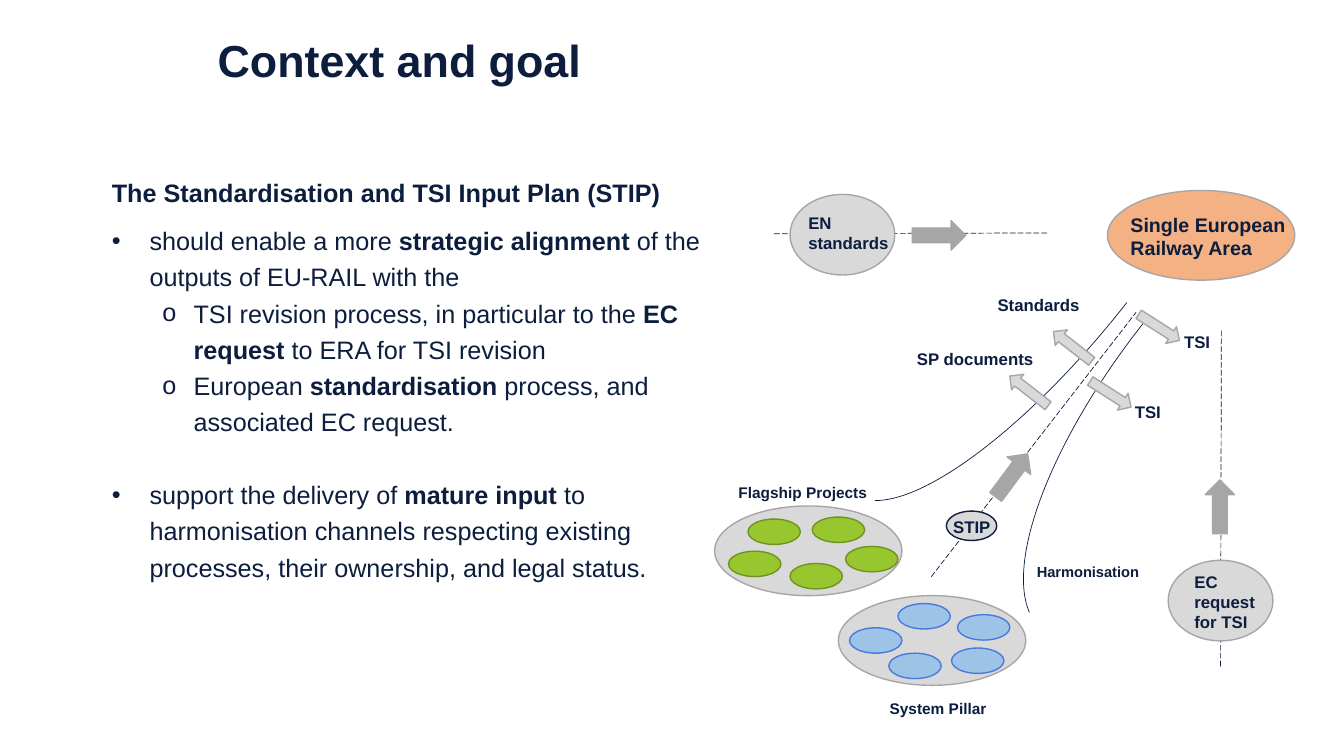
from dataclasses import dataclass

from lxml import etree
from pptx import Presentation
from pptx.dml.color import RGBColor
from pptx.enum import dml, shapes, text
from pptx.oxml.ns import qn
from pptx.util import Cm, Pt


@dataclass(frozen=True)
class Theme:
    font: str = "Arial"
    navy: str = "0C1D3E"
    light: str = "D9D9D9"
    grey: str = "A6A6A6"
    orange: str = "F4B183"
    green: str = "97C62E"
    green_edge: str = "709222"
    blue: str = "9DC3E6"
    blue_edge: str = "487ADC"
    title: float = 32
    body: float = 18
    goal: float = 14
    label: float = 12
    group: float = 11
    small: float = 10.5
    thin: float = 0.5
    outline: float = 1


T = Theme()
SHAPE = shapes.MSO_SHAPE
GROUP_SIZE = (4.72, 2.26)
ITEM_SIZE = (1.32, 0.64)
CIRCLE_SIZE = (2.64, 2.03)
SMALL_ARROW = (1.22, 0.5)
BIG_ARROW = (1.35, 0.74)


def rgb(value):
    return RGBColor.from_string(value)


def add_run(p, words, size=T.label, bold=True, color=T.navy):
    r = p.add_run()
    r.text = words
    r.font.name = T.font
    r.font.size = Pt(size)
    r.font.bold = bold
    r.font.color.rgb = rgb(color)


def add_label(s, words, x, y, w, h, size=T.label, wrap=False):
    tf = s.shapes.add_textbox(Cm(x), Cm(y), Cm(w), Cm(h)).text_frame
    tf.word_wrap = wrap
    tf.auto_size = text.MSO_AUTO_SIZE.SHAPE_TO_FIT_TEXT
    add_run(tf.paragraphs[0], words, size=size)


def add_figure(s, kind, x, y, w, h, fill=T.light, line=T.grey, width=T.outline, rotation=0):
    sp = s.shapes.add_shape(kind, Cm(x), Cm(y), Cm(w), Cm(h))
    sp.shadow.inherit = False
    sp.rotation = rotation
    if fill:
        sp.fill.solid()
        sp.fill.fore_color.rgb = rgb(fill)
    else:
        sp.fill.background()
    sp.line.color.rgb = rgb(line)
    sp.line.width = Pt(width)
    return sp


def add_arc(s, x, y, w, h, start, end, flip=False):
    sp = add_figure(s, SHAPE.ARC, x, y, w, h, fill=None, line=T.navy, width=T.thin, rotation=128.4)
    # Angles in degrees are stored in 60000ths, adjustments in 100000ths
    sp.adjustments[0] = start * 0.6
    sp.adjustments[1] = end * 0.6
    if flip:
        sp._element.spPr.find(qn("a:xfrm")).set("flipV", "1")


def add_dashed_line(s, x1, y1, x2, y2):
    line = s.shapes.add_connector(shapes.MSO_CONNECTOR.STRAIGHT, Cm(x1), Cm(y1), Cm(x2), Cm(y2))
    line.line.color.rgb = rgb(T.navy)
    line.line.width = Pt(T.thin)
    line.line.dash_style = dml.MSO_LINE.LONG_DASH
    etree.SubElement(line._element.spPr, qn("a:effectLst"))


def set_bullet(p, char, left, hanging):
    pPr = p._p.get_or_add_pPr()
    pPr.set("marL", str(Cm(left)))
    pPr.set("indent", str(-Cm(hanging)))
    etree.SubElement(pPr, qn("a:buFont")).set("typeface", T.font)
    etree.SubElement(pPr, qn("a:buChar")).set("char", char)


def add_title(s, words):
    title = s.shapes.title
    title.left, title.top, title.width, title.height = Cm(5.23), Cm(0.84), Cm(27.79), Cm(2.03)
    tf = title.text_frame
    tf.vertical_anchor = text.MSO_ANCHOR.TOP
    p = tf.paragraphs[0]
    p.alignment = text.PP_ALIGN.LEFT
    p.line_spacing = 0.9
    add_run(p, words, size=T.title)


def add_body(s):
    # Each paragraph: level (None is the heading), space before, space after,
    # then runs that alternate between regular and bold
    paragraphs = [
        (None, 0, 8.5, ["", "The Standardisation and TSI Input Plan (STIP)"]),
        (0, 0, 0, ["should enable a more ", "strategic alignment ",
                   "of the outputs of EU-RAIL with the"]),
        (1, 0, 0, ["TSI revision process, in particular to the ", "EC request ",
                   "to ERA for TSI revision"]),
        (1, 0, 0, ["European ", "standardisation", " process, and associated EC request."]),
        (0, 26, 8.5, ["support the delivery of ", "mature input ",
                      "to harmonisation channels respecting existing processes, "
                      "their ownership, and legal status."]),
    ]
    bullets = {0: ("•", 0.95, 0.95), 1: ("o", 2.06, 0.79)}
    tf = s.shapes.add_textbox(Cm(2.57), Cm(4.19), Cm(15.95), Cm(10.64)).text_frame
    tf.word_wrap = True
    tf.auto_size = text.MSO_AUTO_SIZE.SHAPE_TO_FIT_TEXT
    for i, (level, before, after, runs) in enumerate(paragraphs):
        p = tf.add_paragraph() if i else tf.paragraphs[0]
        if level is not None:
            p.level = level
            set_bullet(p, *bullets[level])
        p.line_spacing = 1.2
        if before:
            p.space_before = Pt(before)
        p.space_after = Pt(after)
        for j, words in enumerate(runs):
            if words:
                add_run(p, words, size=T.body, bold=j % 2 == 1)


def add_group(s, x, y, items, fill, line):
    add_figure(s, SHAPE.OVAL, x, y, *GROUP_SIZE)
    for left, top in items:
        add_figure(s, SHAPE.OVAL, left, top, *ITEM_SIZE, fill=fill, line=line)


def add_diagram(s):
    # Axes and channel curves
    for ends in [(30.76, 16.79, 30.78, 8.28), (23.47, 14.53, 28.63, 7.87),
                 (19.51, 5.89, 26.39, 5.87)]:
        add_dashed_line(s, *ends)
    add_arc(s, 18.47, 3.78, 15.85, 4.88, 266.65, 355.81)
    add_arc(s, 23.37, 7.04, 15.37, 5.66, 268.68, 355.81, flip=True)

    # Ovals for inputs and the goal
    add_figure(s, SHAPE.OVAL, 27.91, 4.8, *GROUP_SIZE, fill=T.orange)
    add_figure(s, SHAPE.OVAL, 29.44, 14.12, *CIRCLE_SIZE)
    add_figure(s, SHAPE.OVAL, 19.91, 4.9, *CIRCLE_SIZE)
    add_figure(s, SHAPE.OVAL, 23.85, 12.88, 1.27, 0.74, line=T.navy)

    # Flagship projects and system pillar
    projects = [(18.85, 13.08), (18.36, 13.89), (19.91, 14.2), (20.47, 13.03), (21.31, 13.77)]
    pillar = [(22.4, 16.46), (21.41, 15.82), (22.63, 15.21), (24.13, 15.49), (23.98, 16.33)]
    add_group(s, 18.01, 12.75, projects, T.green, T.green_edge)
    add_group(s, 21.13, 15.01, pillar, T.blue, T.blue_edge)

    # Output arrows, then flow arrows along the axes
    for x, y, angle in [(28.6, 8, 32.6), (27.38, 9.68, 32.6),
                        (25.32, 9.6, 217.9), (26.42, 8.48, 217.9)]:
        add_figure(s, SHAPE.RIGHT_ARROW, x, y, *SMALL_ARROW, rotation=angle)
    for x, y, angle in [(24.82, 11.61, 306.6), (30.07, 12.4, 270), (22.99, 5.56, 0)]:
        add_figure(s, SHAPE.RIGHT_ARROW, x, y, *BIG_ARROW, fill=T.grey, rotation=angle)

    # Labels
    add_label(s, "Single European Railway Area", 28.24, 5.23, 4.52, 1.45, size=T.goal, wrap=True)
    add_label(s, "EN standards", 20.12, 5.23, 2.82, 1.27, wrap=True)
    add_label(s, "EC request for TSI", 29.85, 14.27, 2.26, 1.8, wrap=True)
    add_label(s, "Flagship Projects", 18.36, 12.04, 4.37, 0.74, size=T.group, wrap=True)
    add_label(s, "System Pillar", 22.17, 17.48, 3.15, 0.74, size=T.group, wrap=True)
    add_label(s, "Harmonisation", 25.88, 14.05, 3.25, 0.74, size=T.small)
    for words, x, y, w in [("TSI", 28.35, 10.01, 1.17), ("TSI", 29.59, 8.23, 1.17),
                           ("Standards", 24.89, 7.29, 2.59), ("STIP", 23.77, 12.9, 1.47),
                           ("SP documents", 22.86, 8.66, 3.48)]:
        add_label(s, words, x, y, w, 0.76)


def main():
    prs = Presentation()
    prs.slide_width, prs.slide_height = Cm(33.87), Cm(19.05)
    s = prs.slides.add_slide(prs.slide_layouts[5])
    add_title(s, "Context and goal")
    add_body(s)
    add_diagram(s)
    prs.save("out.pptx")


if __name__ == "__main__":
    main()
